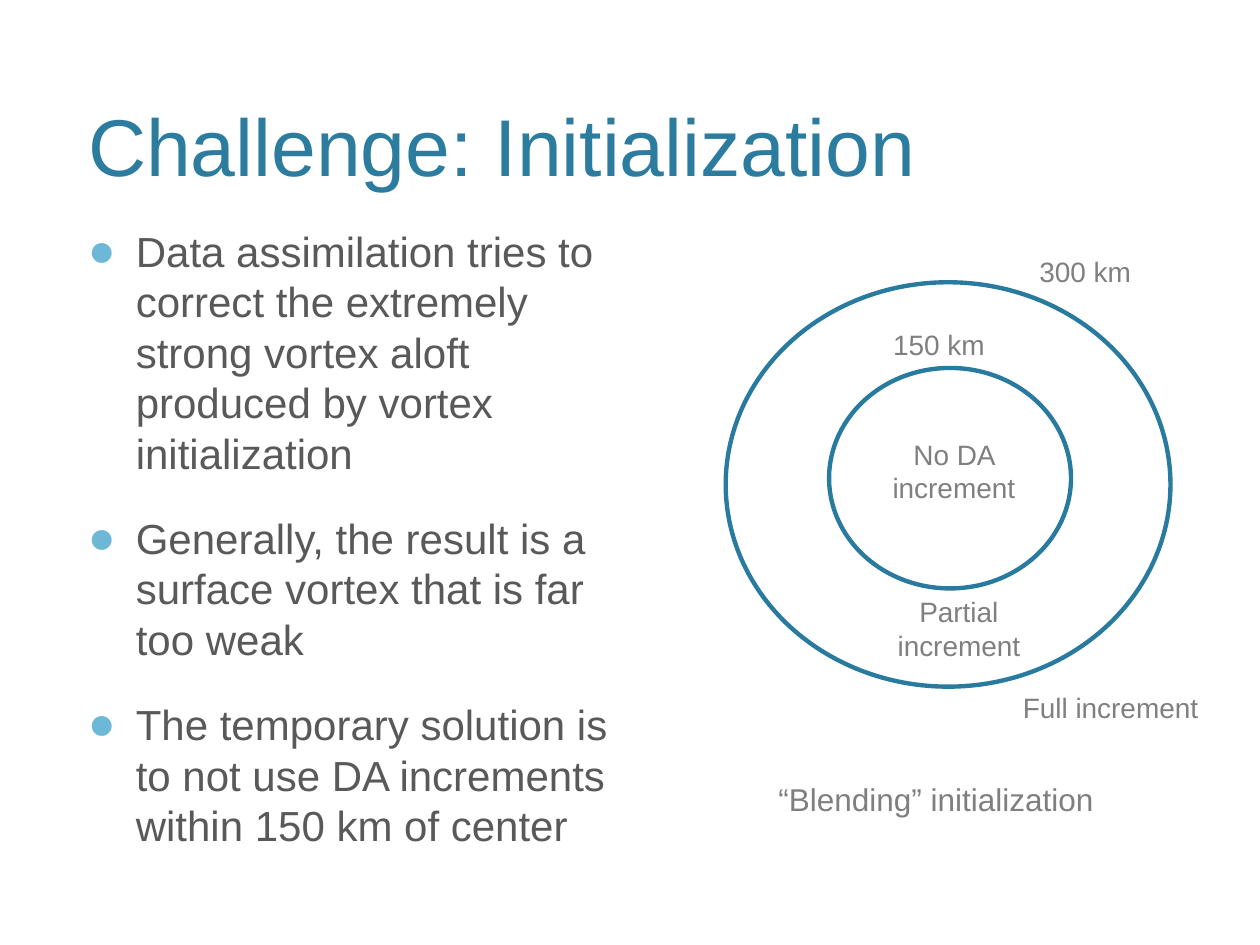
import pptx
import pptx.util
import pptx.dml.color
import pptx.enum.shapes
import pptx.enum.text
import lxml.etree
from pptx.util import Inches, Pt
from pptx.dml.color import RGBColor
from pptx.oxml.ns import qn

TITLE_BLUE = RGBColor(0x2C, 0x7C, 0x9F)
RING_BLUE = RGBColor(0x28, 0x7A, 0x9E)
BULLET_BLUE = RGBColor(0x6D, 0xB7, 0xD7)
BODY_GRAY = RGBColor(0x59, 0x59, 0x59)
LABEL_GRAY = RGBColor(0x7F, 0x7F, 0x7F)
LEFT = pptx.enum.text.PP_ALIGN.LEFT
CENTER = pptx.enum.text.PP_ALIGN.CENTER

presentation = pptx.Presentation()
presentation.slide_width = Inches(10)
presentation.slide_height = Inches(7.5)
slide = presentation.slides.add_slide(presentation.slide_layouts[6])


def add_text(left, top, width, height, paragraphs, size, color, align=LEFT):
    box = slide.shapes.add_textbox(
        Inches(left), Inches(top), Inches(width), Inches(height))
    frame = box.text_frame
    frame.word_wrap = True
    for index, text in enumerate(paragraphs):
        paragraph = frame.paragraphs[0] if index == 0 else frame.add_paragraph()
        paragraph.alignment = align
        run = paragraph.add_run()
        run.text = text
        run.font.name = "Arial"
        run.font.size = Pt(size)
        run.font.color.rgb = color
    return frame


def add_bullet(paragraph):
    properties = paragraph._p.get_or_add_pPr()
    properties.set("marL", str(Inches(0.38)))
    properties.set("indent", str(-Inches(0.38)))
    color = lxml.etree.SubElement(properties, qn("a:buClr"))
    lxml.etree.SubElement(color, qn("a:srgbClr"), val=str(BULLET_BLUE))
    lxml.etree.SubElement(properties, qn("a:buSzPct"), val="110000")
    lxml.etree.SubElement(properties, qn("a:buFont"), typeface="Arial")
    lxml.etree.SubElement(properties, qn("a:buChar"), char="●")


# Title
title = add_text(0.6, 0.12, 10.68, 1.46, ["Challenge: Initialization"], 46, TITLE_BLUE)
title.vertical_anchor = pptx.enum.text.MSO_ANCHOR.BOTTOM

# Bulleted text
body = add_text(0.6, 1.74, 4.64, 4.75, [
    "Data assimilation tries to correct the extremely strong vortex aloft "
    "produced by vortex initialization",
    "Generally, the result is a surface vortex that is far too weak",
    "The temporary solution is to not use DA increments within 150 km of center",
], 24, BODY_GRAY)
for index, paragraph in enumerate(body.paragraphs):
    if index > 0:
        paragraph.space_before = Pt(20)
    add_bullet(paragraph)

# Rings at 300 km and 150 km
for left, top, width, height in [(5.76, 2.24, 3.53, 3.21), (6.58, 2.92, 1.92, 1.75)]:
    ring = slide.shapes.add_shape(
        pptx.enum.shapes.MSO_SHAPE.OVAL,
        Inches(left), Inches(top), Inches(width), Inches(height))
    ring.shadow.inherit = False
    ring.fill.background()
    ring.line.color.rgb = RING_BLUE
    ring.line.width = Pt(2.5)

# Diagram caption and labels
for left, top, width, height, text, size, align in [
    (6.08, 6.14, 3.17, 0.4, "“Blending” initialization", 18, LEFT),
    (8.15, 1.97, 1.28, 0.37, "300 km", 16, LEFT),
    (6.99, 2.55, 1.28, 0.37, "150 km", 16, LEFT),
    (6.93, 3.42, 1.28, 0.64, "No DA increment", 16, CENTER),
    (6.97, 4.67, 1.28, 0.64, "Partial increment", 16, CENTER),
    (8.02, 5.43, 1.76, 0.37, "Full increment", 16, LEFT),
]:
    add_text(left, top, width, height, [text], size, LABEL_GRAY, align)

presentation.save("out.pptx")
